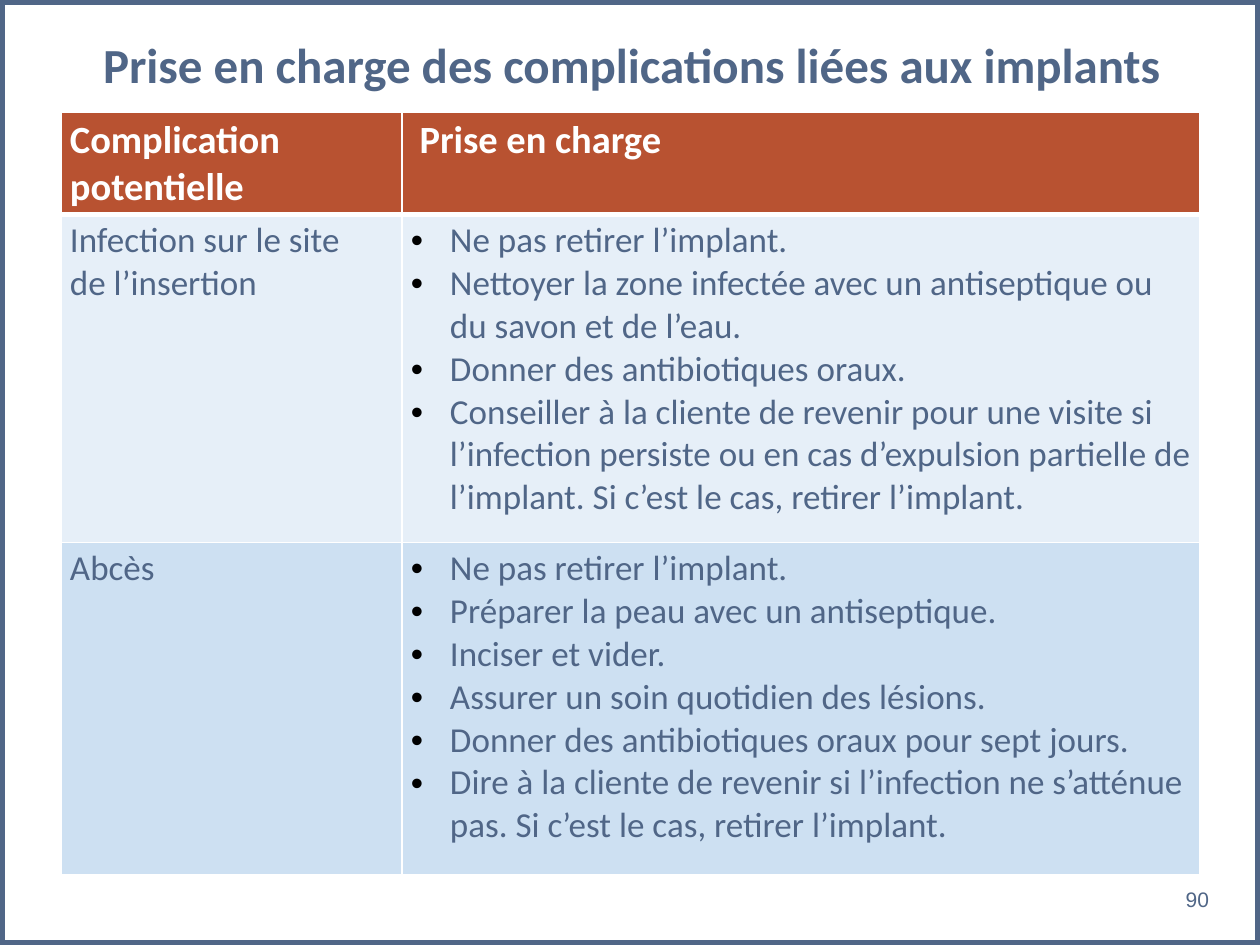
from lxml import etree
from pptx import Presentation
from pptx.dml.color import RGBColor
from pptx.enum.shapes import MSO_SHAPE
from pptx.enum.text import MSO_ANCHOR, PP_ALIGN
from pptx.oxml.ns import qn
from pptx.util import Emu, Pt

RECTANGLE = MSO_SHAPE.RECTANGLE
TOP, MIDDLE = MSO_ANCHOR.TOP, MSO_ANCHOR.MIDDLE
LEFT, CENTER, RIGHT = PP_ALIGN.LEFT, PP_ALIGN.CENTER, PP_ALIGN.RIGHT

SLATE = RGBColor(0x50, 0x66, 0x87)
RUST = RGBColor(0xB8, 0x52, 0x31)
PALE_BLUE = RGBColor(0xE6, 0xEF, 0xF8)
LIGHT_BLUE = RGBColor(0xCD, 0xE0, 0xF2)
WHITE = RGBColor(0xFF, 0xFF, 0xFF)
BLACK = RGBColor(0, 0, 0)

PX_PER_INCH = 126
PAGE_WIDTH, PAGE_HEIGHT = 1260, 945
COLUMN_WIDTHS = [341, 798]
ROW_HEIGHTS = [102, 328, 332]
BULLET_INDENT = 39

HEADERS = ["Complication potentielle", " Prise en charge"]
COMPLICATIONS = [
    ("Infection sur le site \vde l’insertion", PALE_BLUE, [
        "Ne pas retirer l’implant.",
        "Nettoyer la zone infectée avec un antiseptique ou du savon et de l’eau.",
        "Donner des antibiotiques oraux.",
        "Conseiller à la cliente de revenir pour une visite si l’infection persiste "
        "ou en cas d’expulsion partielle de l’implant. Si c’est le cas, retirer l’implant.",
    ]),
    ("Abcès", LIGHT_BLUE, [
        "Ne pas retirer l’implant.",
        "Préparer la peau avec un antiseptique.",
        "Inciser et vider.",
        "Assurer un soin quotidien des lésions.",
        "Donner des antibiotiques oraux pour sept jours.",
        "Dire à la cliente de revenir si l’infection ne s’atténue pas. "
        "Si c’est le cas, retirer l’implant.",
    ]),
]


def px(length):
    return Emu(round(length * 914400 / PX_PER_INCH))


def set_margins(target, across, down):
    target.margin_left = target.margin_right = px(across)
    target.margin_top = target.margin_bottom = px(down)


def style_font(para, size, color, bold=False, name="Calibri"):
    font = para.font
    font.name, font.size, font.bold = name, Pt(size), bold
    font.color.rgb = color


def add_color(parent, tag, color):
    holder = etree.SubElement(parent, qn(tag))
    etree.SubElement(holder, qn("a:srgbClr"), val=str(color))


def add_bullet(para):
    properties = para._p.get_or_add_pPr()
    properties.set("marL", str(px(BULLET_INDENT)))
    properties.set("indent", str(-px(BULLET_INDENT)))
    add_color(properties, "a:buClr", BLACK)
    etree.SubElement(properties, qn("a:buFont"), typeface="Arial")
    etree.SubElement(properties, qn("a:buChar"), char="•")


def add_borders(cell, top, bottom):
    properties = cell._tc.get_or_add_tcPr()
    for side, width in (("L", 1), ("R", 1), ("T", top), ("B", bottom)):
        border = etree.SubElement(properties, qn(f"a:ln{side}"), w=str(Pt(width)))
        add_color(border, "a:solidFill", WHITE)


def fill_cell(cell, lines, fill, color, size, bold=False, bullets=False, top=1, bottom=1):
    add_borders(cell, top, bottom)
    cell.fill.solid()
    cell.fill.fore_color.rgb = fill
    set_margins(cell, 9, 5)
    cell.vertical_anchor = TOP
    cell.text = "\n".join(lines)
    for para in cell.text_frame.paragraphs:
        para.alignment = LEFT
        if bullets:
            add_bullet(para)
        style_font(para, size, color, bold)


def add_text(page, text, bounds, margins, anchor, alignment, **style):
    box = page.shapes.add_textbox(*map(px, bounds))
    frame = box.text_frame
    frame.word_wrap = True
    frame.vertical_anchor = anchor
    set_margins(frame, *margins)
    frame.text = text
    para = frame.paragraphs[0]
    para.alignment = alignment
    style_font(para, color=SLATE, **style)


def add_complications_table(page):
    bounds = (61, 112, sum(COLUMN_WIDTHS), sum(ROW_HEIGHTS))
    table = page.shapes.add_table(
        len(ROW_HEIGHTS), len(COLUMN_WIDTHS), *map(px, bounds)).table
    for column, width in zip(table.columns, COLUMN_WIDTHS):
        column.width = px(width)
    for row, height in zip(table.rows, ROW_HEIGHTS):
        row.height = px(height)
    for index, header in enumerate(HEADERS):
        fill_cell(table.cell(0, index), [header], RUST, WHITE, 22, bold=True, bottom=3)
    for index, (complication, fill, actions) in enumerate(COMPLICATIONS, start=1):
        top = 3 if index == 1 else 1
        fill_cell(table.cell(index, 0), [complication], fill, SLATE, 20, top=top)
        fill_cell(table.cell(index, 1), actions, fill, SLATE, 20, bullets=True, top=top)


def add_frame(page):
    border = page.shapes.add_shape(RECTANGLE, 0, 0, px(PAGE_WIDTH), px(PAGE_HEIGHT))
    border.shadow.inherit = False
    border.fill.background()
    border.line.color.rgb = SLATE
    border.line.width = Pt(5.25)


def main():
    deck = Presentation()
    deck.slide_width, deck.slide_height = px(PAGE_WIDTH), px(PAGE_HEIGHT)
    page = deck.slides.add_slide(deck.slide_layouts[6])
    add_text(page, "Prise en charge des complications liées aux implants",
             (9, 29, 1245, 69), (9, 5), TOP, CENTER, size=28, bold=True)
    add_complications_table(page)
    add_text(page, "90", (929, 874, 293, 51), (13, 6), MIDDLE, RIGHT,
             size=12, name="Arial")
    add_frame(page)
    deck.save("out.pptx")


if __name__ == "__main__":
    main()
